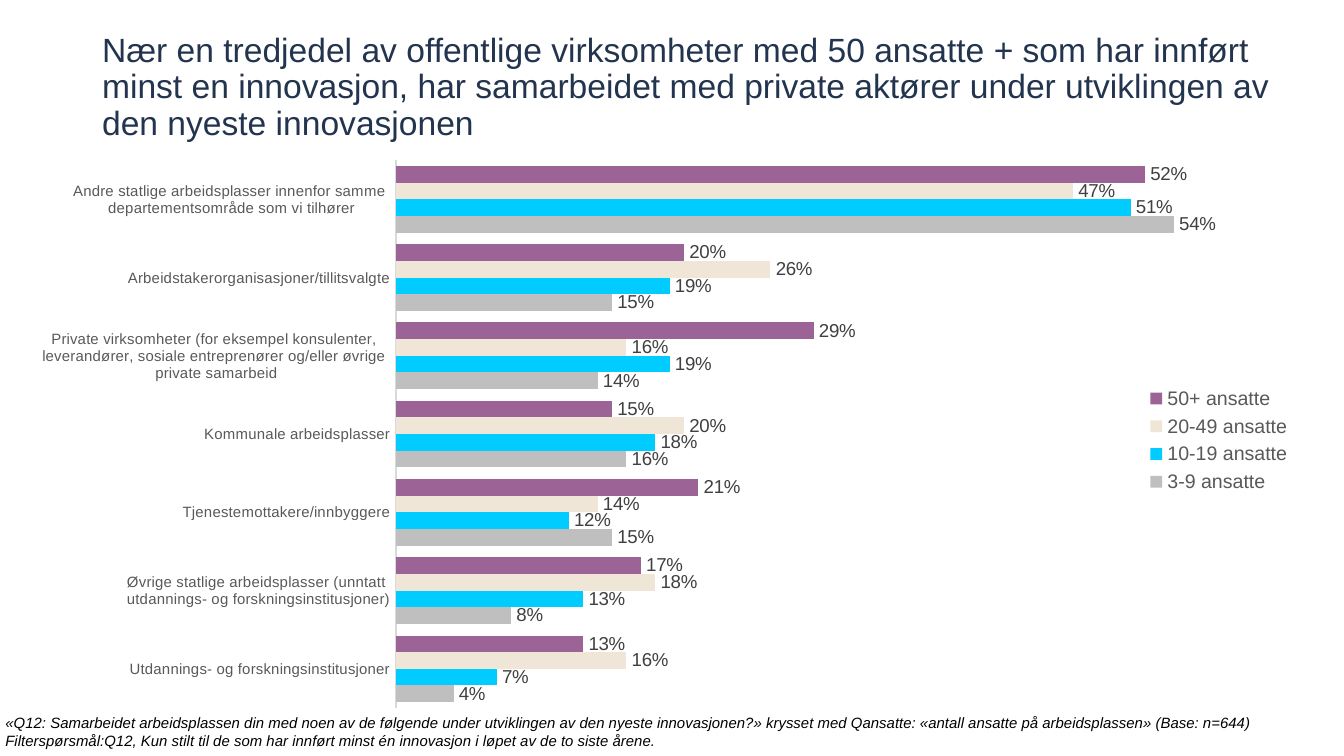
from lxml import etree
from pptx import Presentation
from pptx.chart.data import CategoryChartData
from pptx.dml.color import RGBColor
from pptx.enum.chart import XL_CHART_TYPE, XL_LABEL_POSITION, XL_LEGEND_POSITION, XL_TICK_MARK
from pptx.enum.text import MSO_ANCHOR
from pptx.oxml.ns import qn
from pptx.util import Inches, Pt

BAR_CLUSTERED = XL_CHART_TYPE.BAR_CLUSTERED
OUTSIDE_END = XL_LABEL_POSITION.OUTSIDE_END
LEGEND_RIGHT = XL_LEGEND_POSITION.RIGHT
NO_TICK = XL_TICK_MARK.NONE
TOP = MSO_ANCHOR.TOP
MIDDLE = MSO_ANCHOR.MIDDLE

FONT = "Arial"
COLORS = {
    "title": "23344F",
    "text": "000000",
    "axis_text": "595959",
    "label": "404040",
    "axis_line": "D9D9D9",
    "3-9 ansatte": "BFBFBF",
    "10-19 ansatte": "00CCFF",
    "20-49 ansatte": "F0E6D8",
    "50+ ansatte": "9B6396",
}

TITLE = (
    "Nær en tredjedel av offentlige virksomheter med 50 ansatte + som har innført "
    "minst en innovasjon, har samarbeidet med private aktører under utviklingen av "
    "den nyeste innovasjonen"
)
FOOTNOTE = (
    "«Q12: Samarbeidet arbeidsplassen din med noen av de følgende under utviklingen "
    "av den nyeste innovasjonen?» krysset med Qansatte: «antall ansatte på "
    "arbeidsplassen» (Base: n=644) Filterspørsmål:Q12, Kun stilt til de som har "
    "innført minst én innovasjon i løpet av de to siste årene."
)
PARTNERS = [
    "Utdannings- og forskningsinstitusjoner",
    "Øvrige statlige arbeidsplasser (unntatt \nutdannings- og forskningsinstitusjoner)",
    "Tjenestemottakere/innbyggere",
    "Kommunale arbeidsplasser",
    "Private virksomheter (for eksempel konsulenter, \n"
    "leverandører, sosiale entreprenører og/eller øvrige \nprivate samarbeid",
    "Arbeidstakerorganisasjoner/tillitsvalgte",
    "Andre statlige arbeidsplasser innenfor samme \ndepartementsområde som vi tilhører",
]
SHARES = {
    "3-9 ansatte": [0.04, 0.08, 0.15, 0.16, 0.14, 0.15, 0.54],
    "10-19 ansatte": [0.07, 0.13, 0.12, 0.18, 0.19, 0.19, 0.51],
    "20-49 ansatte": [0.16, 0.18, 0.14, 0.2, 0.16, 0.26, 0.47],
    "50+ ansatte": [0.13, 0.17, 0.21, 0.15, 0.29, 0.2, 0.52],
}


class SlideBuilder:
    def __init__(self, slide):
        self.slide = slide

    def style(self, font, size, color):
        font.name = FONT
        font.size = Pt(size)
        font.color.rgb = RGBColor.from_string(COLORS[color])

    def text(self, area, text, size, color, anchor=TOP, spacing=1.0, italic=False):
        box = self.slide.shapes.add_textbox(*map(Inches, area))
        frame = box.text_frame
        frame.word_wrap = True
        frame.vertical_anchor = anchor
        frame.margin_left = frame.margin_right = 0
        frame.margin_top = frame.margin_bottom = 0
        frame.text = text
        para = frame.paragraphs[0]
        para.line_spacing = spacing
        span = para.runs[0]
        self.style(span.font, size, color)
        span.font.italic = italic

    def place_plot(self, chart, bounds):
        plot_area = chart.plots[0]._element.getparent()
        for old in plot_area.findall(qn("c:layout")):
            plot_area.remove(old)
        layout = etree.Element(qn("c:layout"))
        manual = etree.SubElement(layout, qn("c:manualLayout"))
        settings = [("layoutTarget", "inner"), ("xMode", "edge"), ("yMode", "edge")]
        settings += zip("xywh", bounds)
        for name, value in settings:
            etree.SubElement(manual, qn(f"c:{name}")).set("val", str(value))
        plot_area.insert(0, layout)

    def bar_chart(self, area, categories, groups, plot_bounds):
        data = CategoryChartData(number_format="0%")
        data.categories = categories
        for name, values in groups.items():
            data.add_series(name, values)
        frame = self.slide.shapes.add_chart(BAR_CLUSTERED, *map(Inches, area), data)
        chart = frame.chart
        chart.has_title = False
        self.style(chart.font, 10, "text")
        self.place_plot(chart, plot_bounds)

        plot = chart.plots[0]
        plot.gap_width = 70
        plot.overlap = 0
        plot.vary_by_categories = False
        for series in plot.series:
            series.format.fill.solid()
            series.format.fill.fore_color.rgb = RGBColor.from_string(COLORS[series.name])
            labels = series.data_labels
            labels.show_value = True
            labels.position = OUTSIDE_END
            labels.number_format = "0%"
            labels.number_format_is_linked = False
            self.style(labels.font, 10, "label")

        axis = chart.category_axis
        axis.major_tick_mark = axis.minor_tick_mark = NO_TICK
        axis.format.line.color.rgb = RGBColor.from_string(COLORS["axis_line"])
        axis.format.line.width = Pt(0.75)
        self.style(axis.tick_labels.font, 8, "axis_text")

        scale = chart.value_axis
        scale.minimum_scale = 0
        scale.maximum_scale = 0.6
        scale.has_major_gridlines = False
        scale.visible = False

        chart.has_legend = True
        chart.legend.position = LEGEND_RIGHT
        chart.legend.include_in_layout = False
        self.style(chart.legend.font, 10.5, "axis_text")


def main():
    deck = Presentation()
    deck.slide_width = Inches(10)
    deck.slide_height = deck.slide_width * 9 // 16
    page = SlideBuilder(deck.slides.add_slide(deck.slide_layouts[6]))
    page.text((0.76, 0.49, 9.15, 0.33), TITLE, 18, "title", MIDDLE, spacing=0.9)
    page.bar_chart((0.25, 1.04, 9.46, 4.47), PARTNERS, SHARES, (0.285, 0.034, 0.68, 0.912))
    page.text((0.04, 5.31, 9.96, 0.27), FOOTNOTE, 8, "text", italic=True)
    deck.save("out.pptx")


if __name__ == "__main__":
    main()
